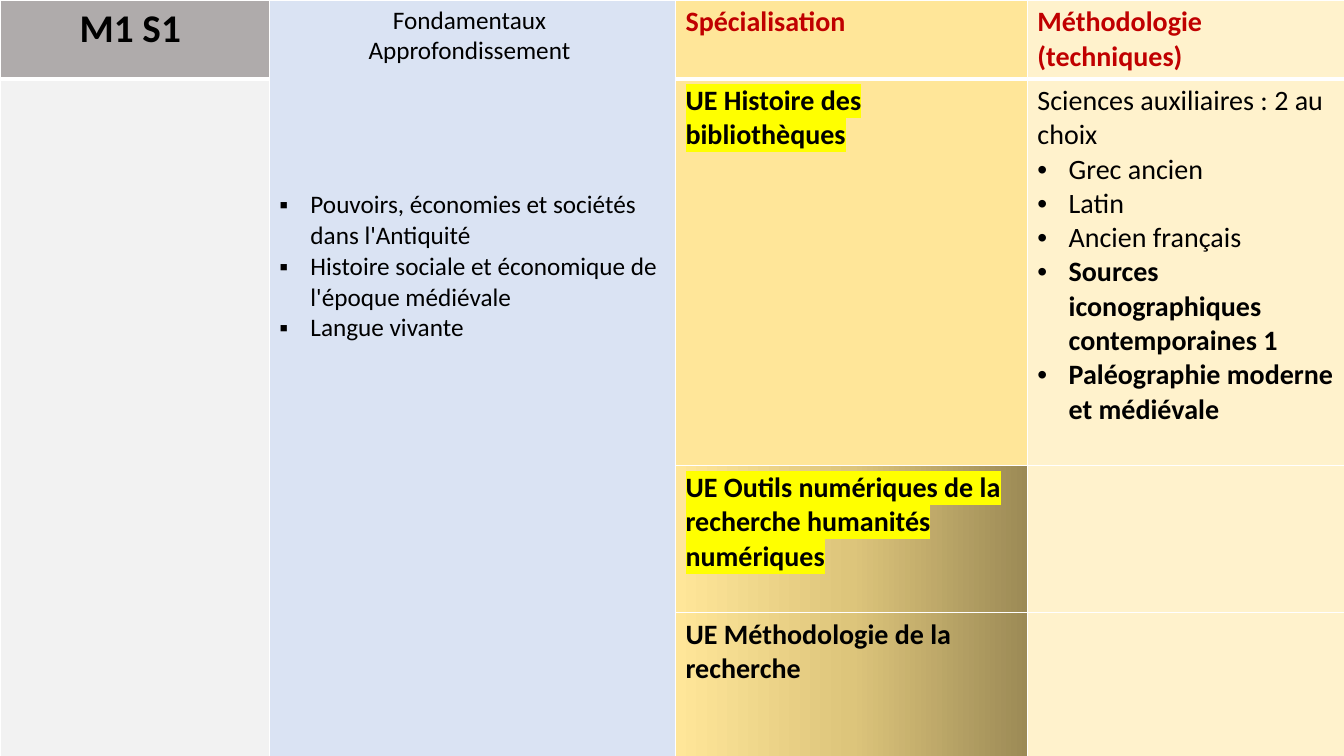
from lxml import etree
from pptx import Presentation
from pptx import util as u
from pptx.dml.color import RGBColor
from pptx.enum import text
from pptx.oxml import ns

BLACK, RED, YELLOW, WHITE = "000000", "C00000", "FFFF00", "FFFFFF"
GREY, PALE_GREY, BLUE, GOLD, CREAM = "AFABAB", "F2F2F2", "DAE3F3", "FFE699", "FFF2CC"
FADE = ((0, "9C8A56"), (50, "DDC57B"), (100, GOLD))

COLUMN_WIDTHS = (2.67, 4.03, 3.49, 3.15)
ROW_HEIGHTS = (0.78, 3.84, 1.46, 1.42)
FILLS = (
    (GREY, BLUE, GOLD, CREAM),
    (PALE_GREY, BLUE, GOLD, CREAM),
    (PALE_GREY, BLUE, FADE, CREAM),
    (PALE_GREY, BLUE, FADE, CREAM),
)


def color(value):
    return RGBColor.from_string(value)


def add_node(parent, tag, **attributes):
    return etree.SubElement(parent, ns.qn(tag), attributes)


def add_solid(parent, value):
    add_node(add_node(parent, "a:solidFill"), "a:srgbClr", val=value)


def paint(cell, fill, bottom_width):
    """Give a cell white borders and a plain or left-to-right faded fill."""
    properties = cell._tc.get_or_add_tcPr()
    for side, width in zip("LRTB", (1, 1, 1, bottom_width)):
        add_solid(add_node(properties, f"a:ln{side}", w=str(u.Pt(width))), WHITE)
    if isinstance(fill, str):
        add_solid(properties, fill)
        return
    gradient = add_node(properties, "a:gradFill", rotWithShape="1")
    stops = add_node(gradient, "a:gsLst")
    for position, value in fill:
        stop = add_node(stops, "a:gs", pos=str(position * 1000))
        add_node(stop, "a:srgbClr", val=value)
    add_node(gradient, "a:lin", ang=str(180 * 60000), scaled="0")


def write(cell, *lines, size=20, bold=True, ink=BLACK, highlight=None, centred=False):
    cell.text_frame.text = "\n".join(lines)
    for para in cell.text_frame.paragraphs:
        para.alignment = text.PP_ALIGN.CENTER if centred else text.PP_ALIGN.LEFT
        for span in para.runs:
            font = span.font
            font.name, font.size, font.bold = "Calibri", u.Pt(size), bold
            font.color.rgb = color(ink)
            if highlight:
                marker = etree.Element(ns.qn("a:highlight"))
                add_node(marker, "a:srgbClr", val=highlight)
                font._element.find(ns.qn("a:solidFill")).addnext(marker)


def set_bullet(para, symbol):
    para.alignment = text.PP_ALIGN.LEFT
    properties = para._p.get_or_add_pPr()
    indent = u.Inches(0.31)
    properties.set("marL", str(indent))
    properties.set("indent", str(-indent))
    add_node(properties, "a:buFont", typeface="Arial")
    add_node(properties, "a:buChar", char=symbol)


def write_foundations(cell):
    write(cell, "Fondamentaux ", "Approfondissement ",
          "Pouvoirs, économies et sociétés dans l'Antiquité",
          "Histoire sociale et économique de l'époque médiévale",
          "Langue vivante", size=18, bold=False, centred=True)
    courses = cell.text_frame.paragraphs[2:]
    courses[0].space_before = u.Pt(88)
    for para in courses:
        set_bullet(para, "▪")


def write_auxiliary_sciences(cell):
    write(cell, "Sciences auxiliaires : 2 au choix", "Grec ancien", "Latin",
          "Ancien français", "Sources iconographiques contemporaines 1",
          "Paléographie moderne et médiévale", bold=False)
    paragraphs = cell.text_frame.paragraphs
    for para in paragraphs[1:]:
        set_bullet(para, "•")
    for para in paragraphs[-2:]:
        para.runs[0].font.bold = True


def add_semester_table(page, left, top, width, height):
    frame = page.shapes.add_table(len(ROW_HEIGHTS), len(COLUMN_WIDTHS),
                                  left, top, width, height)
    table = frame.table
    table.first_row = table.horz_banding = False
    for column, inches in zip(table.columns, COLUMN_WIDTHS):
        column.width = u.Inches(inches)
    for row, inches in zip(table.rows, ROW_HEIGHTS):
        row.height = u.Inches(inches)
    for i, fills in enumerate(FILLS):
        for j, fill in enumerate(fills):
            paint(table.cell(i, j), fill, bottom_width=1 if i or j == 1 else 3)
    table.cell(1, 0).merge(table.cell(3, 0))
    table.cell(0, 1).merge(table.cell(3, 1))

    write(table.cell(0, 0), "M1 S1 ", size=28, centred=True)
    write_foundations(table.cell(0, 1))
    write(table.cell(0, 2), "Spécialisation", ink=RED)
    write(table.cell(0, 3), "Méthodologie", "(techniques)", ink=RED)
    write(table.cell(1, 2), "UE Histoire des bibliothèques", highlight=YELLOW)
    write_auxiliary_sciences(table.cell(1, 3))
    write(table.cell(2, 2), "UE Outils numériques de la recherche humanités numériques",
          highlight=YELLOW)
    write(table.cell(3, 2), "UE Méthodologie de la recherche")


def main():
    deck = Presentation()
    deck.slide_width, deck.slide_height = u.Inches(13.33), u.Inches(7.5)
    page = deck.slides.add_slide(deck.slide_layouts[6])
    add_semester_table(page, 0, 0, deck.slide_width, deck.slide_height)
    deck.save("out.pptx")


if __name__ == "__main__":
    main()
